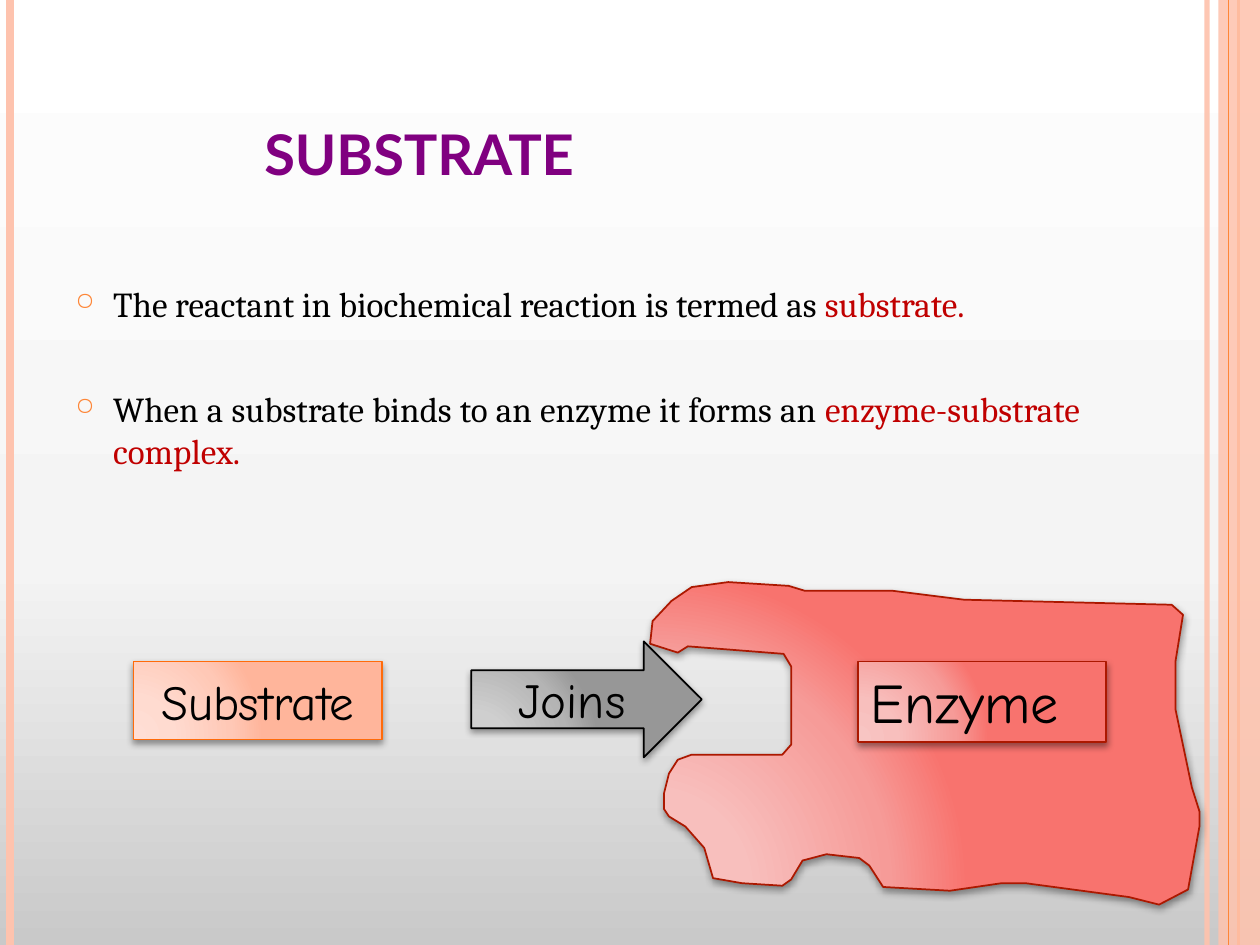
from lxml import etree
from pptx import Presentation
from pptx.dml.color import RGBColor
from pptx.enum.shapes import MSO_CONNECTOR, MSO_SHAPE
from pptx.enum.text import MSO_ANCHOR as Anchor, PP_ALIGN as Align
from pptx.oxml.ns import qn
from pptx.util import Inches, Pt

CELL = Inches(0.25)
COLUMNS, ROWS = 40, 30

RED = ("F8C5C3", "F8BFBD", "F69B98", "F8736E")
GREY = ("D3D3D3", "CFCFCF", "B4B4B4", "979797")
PEACH = ("FFDED5", "FFDBD0", "FFC8B6", "FFB59B")

# Corners of the enzyme, in hundredths of an inch, from its upper lip
ENZYME_OUTLINE = [
    (546, 513), (622, 519), (628, 529), (628, 591), (621, 599), (549, 599),
    (538, 603), (531, 614), (527, 630), (527, 642), (531, 648), (544, 656),
    (559, 673), (566, 697), (589, 701), (621, 703), (628, 698), (637, 683),
    (656, 678), (682, 681), (690, 687), (701, 704), (754, 707), (795, 701),
    (814, 701), (896, 712), (920, 718), (943, 706), (952, 656), (952, 644),
    (946, 625), (933, 563), (933, 525), (939, 488), (930, 480), (765, 476),
    (709, 469), (639, 469), (626, 465), (578, 462), (549, 466), (533, 477),
    (518, 493), (516, 511), (538, 518),
]


def colour(value):
    return RGBColor.from_string(value)


def add_element(parent, tag, **attributes):
    element = etree.SubElement(parent, qn(tag))
    for name, value in attributes.items():
        element.set(name, str(value))
    return element


def set_alpha(parent, percent):
    for element in parent.iter(qn("a:srgbClr")):
        add_element(element, "a:alpha", val=percent * 1000)


def set_gradient(parent, stops):
    """Put a gradient in place of the parent's solid fill and return it."""
    solid = parent.find(qn("a:solidFill"))
    gradient = etree.Element(qn("a:gradFill"), rotWithShape="1")
    stop_list = add_element(gradient, "a:gsLst")
    for position, value in stops:
        stop = add_element(stop_list, "a:gs", pos=position * 1000)
        add_element(stop, "a:srgbClr", val=value)
    parent.replace(solid, gradient)
    return gradient


class SlideBuilder:
    """Places elements on one slide; lengths are counted in grid cells."""

    accent = "FE8637"
    pale = "FEC3AE"
    label_font = "Comic Neue"

    def __init__(self, slide):
        self.slide = slide
        self.shapes = slide.shapes

    def background(self, stops):
        self.slide.background.fill.solid()
        properties = self.slide._element.find(".//" + qn("p:bgPr"))
        gradient = set_gradient(properties, stops)
        add_element(gradient, "a:lin", ang=270 * 60000, scaled=0)

    def rule(self, column, value, width, alpha=100):
        x = int(column * CELL)
        line = self.shapes.add_connector(MSO_CONNECTOR.STRAIGHT, x, 0, x, ROWS * CELL)
        line.line.color.rgb = colour(value)
        line.line.width = Pt(width)
        properties = line._element.spPr
        set_alpha(properties, alpha)
        add_element(properties, "a:effectLst")

    def band(self, column, width, alpha):
        band = self.shapes.add_shape(
            MSO_SHAPE.RECTANGLE, *self.box(column, 0, width, ROWS))
        band.shadow.inherit = False
        band.fill.solid()
        band.fill.fore_color.rgb = colour(self.pale)
        set_alpha(band._element.spPr, alpha)
        band.line.fill.background()

    def box(self, *cells):
        return [int(cell * CELL) for cell in cells]

    def run(self, paragraph, text, font, size, value, bold=False):
        run = paragraph.add_run()
        run.text = text
        run.font.name, run.font.size, run.font.bold = font, Pt(size), bold
        run.font.color.rgb = colour(value)
        return run

    def title(self, text, cells, indent):
        frame = self.shapes.add_textbox(*self.box(*cells)).text_frame
        frame.word_wrap = True
        frame.vertical_anchor = Anchor.BOTTOM
        paragraph = frame.paragraphs[0]
        paragraph._p.get_or_add_pPr().set("marL", str(int(indent * CELL)))
        run = self.run(paragraph, text, "Lato", 40, "800080", bold=True)
        run.font._element.set("cap", "small")

    def bullets(self, items, cells):
        """Each item is a plain opening and a highlighted ending."""
        frame = self.shapes.add_textbox(*self.box(*cells)).text_frame
        frame.word_wrap = True
        for index, (opening, ending) in enumerate(items):
            paragraph = frame.add_paragraph() if index else frame.paragraphs[0]
            paragraph.alignment = Align.JUSTIFY
            paragraph.space_before = Pt(36 if index else 0)
            properties = paragraph._p.get_or_add_pPr()
            properties.set("marL", str(Inches(0.3)))
            properties.set("indent", str(-Inches(0.3)))
            bullet_colour = add_element(properties, "a:buClr")
            add_element(bullet_colour, "a:srgbClr", val=self.accent)
            add_element(properties, "a:buSzPct", val=70000)
            add_element(properties, "a:buChar", char="○")
            self.run(paragraph, opening, "Cambria", 20, "000000")
            self.run(paragraph, ending, "Cambria", 20, "C00000")

    def glossy(self, shape, tints, outline):
        """Light from the lower left corner, thin outline and soft shadow."""
        shape.fill.solid()
        properties = shape._element.spPr
        gradient = set_gradient(properties, zip((0, 30, 75, 100), tints))
        glow = add_element(gradient, "a:path", path="circle")
        add_element(glow, "a:fillToRect", l=5000, t=100000, r=120000, b=10000)
        shape.line.color.rgb = colour(outline)
        shape.line.width = Pt(1)
        shape.shadow.inherit = False
        shadow = add_element(
            properties.find(qn("a:effectLst")), "a:outerShdw", blurRad=Pt(4),
            dist=Pt(2), dir=90 * 60000, rotWithShape=0)
        add_element(shadow, "a:srgbClr", val="000000")
        set_alpha(shadow, 40)

    def outline(self, points, tints, line):
        builder = self.shapes.build_freeform(*points[0], scale=Inches(0.01))
        builder.add_line_segments(points[1:], close=True)
        self.glossy(builder.convert_to_shape(), tints, line)

    def label(self, kind, text, cells, tints, line, size=28,
              align=Align.CENTER, anchor=Anchor.MIDDLE, wrap=False):
        shape = self.shapes.add_shape(kind, *self.box(*cells))
        self.glossy(shape, tints, line)
        frame = shape.text_frame
        frame.word_wrap, frame.vertical_anchor = wrap, anchor
        paragraph = frame.paragraphs[0]
        paragraph.alignment = align
        self.run(paragraph, text, self.label_font, size, "000000")


def main():
    presentation = Presentation()
    presentation.slide_width = COLUMNS * CELL
    presentation.slide_height = ROWS * CELL
    page = SlideBuilder(presentation.slides.add_slide(presentation.slide_layouts[6]))

    page.background([(0, "C9C9C9"), (40, "F4F4F4"), (100, "FFFFFF")])
    page.rule(38.32, page.pale, 3, alpha=93)
    page.rule(0.32, page.pale, 4.5)
    page.rule(39.32, page.accent, 1.5)
    page.band(38.68, 1.32, alpha=87)
    page.rule(39, page.accent, 0.75)

    page.title("substrate", (2, 1.2, 32.68, 5), indent=6)
    page.bullets([
        ("The reactant in biochemical reaction is termed as ", "substrate."),
        ("When a substrate binds to an enzyme it forms an ", "enzyme-substrate complex."),
    ], (2, 8.76, 32.68, 8))

    page.outline(ENZYME_OUTLINE, RED, "AC1800")
    page.label(MSO_SHAPE.RECTANGLE, "Enzyme", (27.24, 21, 7.88, 2.56), RED, "AC1800",
               size=32, align=Align.LEFT, anchor=Anchor.TOP, wrap=True)
    page.label(MSO_SHAPE.RIGHT_ARROW, "Joins", (14.96, 20.36, 7.32, 3.68), GREY, "000000")
    page.label(MSO_SHAPE.RECTANGLE, "Substrate", (4.24, 21, 7.88, 2.48), PEACH, "FF6B0A")
    presentation.save("out.pptx")


if __name__ == "__main__":
    main()
